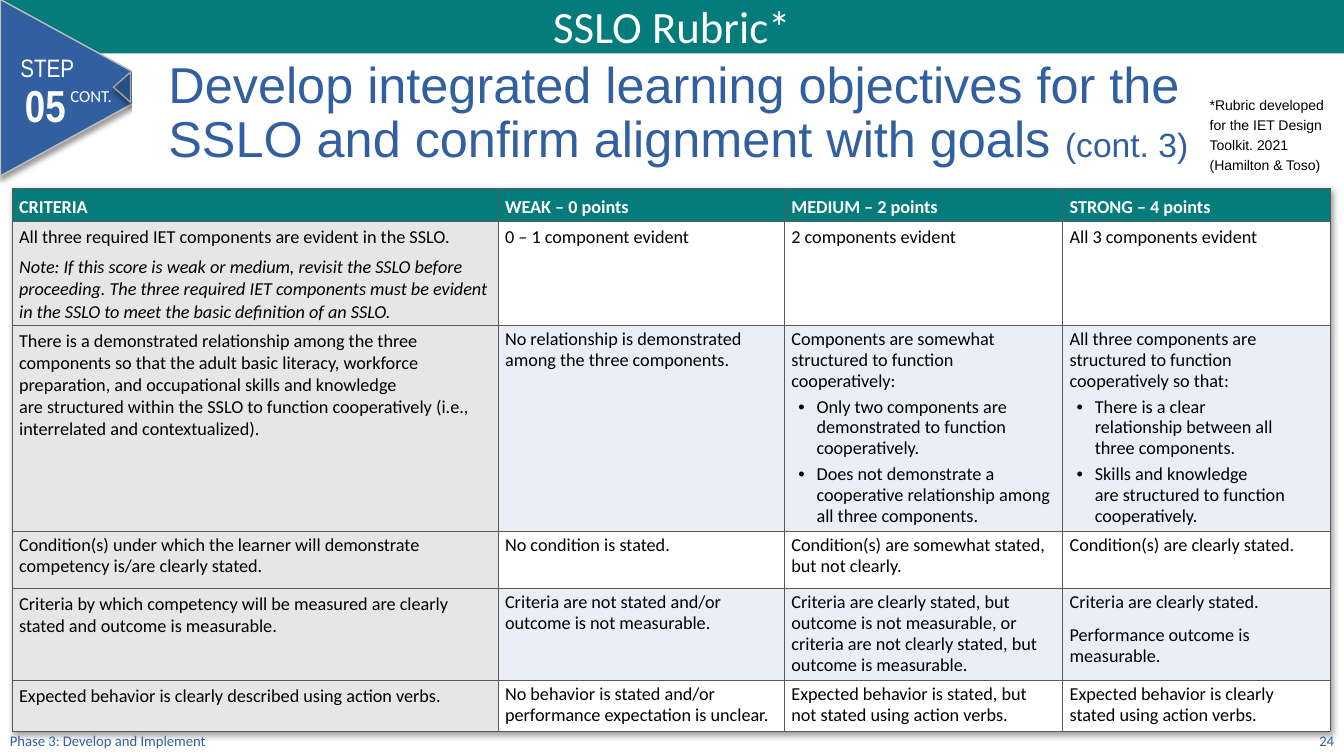
from lxml.etree import SubElement
from pptx import Presentation
from pptx.dml.color import RGBColor
from pptx.enum.shapes import MSO_SHAPE as Shape
from pptx.enum.text import MSO_ANCHOR as Anchor, MSO_AUTO_SIZE as AutoSize, PP_ALIGN as Align
from pptx.oxml.ns import qn
from pptx.util import Inches, Pt

TEAL, BLUE, WHITE, BLACK = "047C7C", "315F9F", "FFFFFF", "000000"
GREY, PALE, BORDER = "E7E6E6", "EAEFF7", "595959"
HARD_SPACE = chr(160)
COLUMNS = [4.82, 2.84, 2.76, 2.65]
ROWS = [0.33, 1.02, 2.04, 0.57, 0.9, 0.5]
HEADINGS = ["CRITERIA", "WEAK – 0 points", "MEDIUM – 2 points", "STRONG – 4 points"]
RUBRIC = [
    [["All three required IET components are evident in the SSLO.",
      "Note: If this score is weak or medium, revisit the SSLO before proceeding. "
      "The three required IET components must be evident in the SSLO to meet the "
      "basic definition of an SSLO."],
     ["0 – 1 component evident"],
     ["2 components evident"],
     ["All 3 components evident"]],
    [["There is a demonstrated relationship~among the three components so~that the adult "
      "basic literacy, workforce preparation, and occupational skills and knowledge "
      "are~structured within the SSLO to function cooperatively (i.e., interrelated "
      "and contextualized)."],
     ["No relationship~is demonstrated among the three components."],
     ["Components are somewhat structured to function cooperatively:",
      "• Only two components are demonstrated to function cooperatively.",
      "• Does not demonstrate a cooperative~relationship among all three~components."],
     ["All three components are structured to function cooperatively so that:",
      "• There is a clear relationship~between all \nthree components.",
      "• Skills and knowledge are~structured to function cooperatively."]],
    [["Condition(s) under which the learner will demonstrate competency is/are clearly stated."],
     ["No condition is stated."],
     ["Condition(s) are somewhat stated, but not clearly."],
     ["Condition(s) are clearly stated."]],
    [["Criteria by which competency will be measured are clearly stated and outcome is measurable."],
     ["Criteria are not~stated and/or outcome is not~measurable."],
     ["Criteria are clearly stated, but outcome is~not measurable, or criteria are not "
      "clearly stated, but outcome is measurable."],
     ["Criteria are clearly stated.", "Performance outcome is measurable."]],
    [["Expected behavior is clearly described using action verbs."],
     ["No behavior is stated and/or performance expectation~is unclear."],
     ["Expected behavior is stated, but not stated using action verbs."],
     ["Expected behavior is clearly stated using action verbs."]],
]


def rgb(code):
    """Turn a hex string into a colour."""
    return RGBColor.from_string(code)


def write(frame, text, size=13, color=BLACK, font="Calibri", bold=False, italic=False,
          align=Align.LEFT, spacing=1.0, before=0, after=0, bullet=False, append=False):
    """Write a formatted paragraph, or append a run to the last one."""
    paragraph = frame.paragraphs[-1]
    if paragraph.runs and not append:
        paragraph = frame.add_paragraph()
    paragraph.alignment, paragraph.line_spacing = align, spacing
    paragraph.space_before, paragraph.space_after = Pt(before), Pt(after)
    if bullet:
        properties = paragraph._p.get_or_add_pPr()
        properties.set("marL", str(Inches(0.25)))
        properties.set("indent", str(Inches(-0.18)))
        SubElement(properties, qn("a:buFont"), typeface="Arial")
        SubElement(properties, qn("a:buChar"), char="•")
    for number, line in enumerate(text.split("\n")):
        if number:
            paragraph.add_line_break()
        run = paragraph.add_run()
        run.text = line
        run.font.size, run.font.name = Pt(size), font
        run.font.bold, run.font.italic = bold, italic
        run.font.color.rgb = rgb(color)


def add_label(slide, box, text, wrap=True, anchor=Anchor.TOP, **style):
    """Place a line of text in a box given in inches."""
    frame = slide.shapes.add_textbox(*map(Inches, box)).text_frame
    frame.word_wrap, frame.vertical_anchor = wrap, anchor
    write(frame, text, **style)


def add_shadow(properties, direction):
    """Add a soft outer shadow to shape or table properties."""
    effects = properties.find(qn("a:effectLst"))
    if effects is None:
        effects = SubElement(properties, qn("a:effectLst"))
    shadow = SubElement(effects, qn("a:outerShdw"), blurRad=str(Pt(4)), dist=str(Pt(3)),
                        dir=str(direction * 60000), algn="tl", rotWithShape="0")
    color = SubElement(shadow, qn("a:srgbClr"), val=BLACK)
    SubElement(color, qn("a:alpha"), val="40000")


def add_block(slide, kind, box, fill, line=None, rotation=0):
    """Add a filled shape; an outlined one also casts a shadow."""
    block = slide.shapes.add_shape(kind, *map(Inches, box))
    block.shadow.inherit = False
    block.rotation = rotation
    block.fill.solid()
    block.fill.fore_color.rgb = rgb(fill)
    if line:
        block.line.color.rgb, block.line.width = rgb(line), Pt(1)
        add_shadow(block._element.spPr, 90)
    else:
        block.line.fill.background()


def add_banner(slide, left, top, width, height):
    """Draw the top bar with the rubric name."""
    add_block(slide, Shape.RECTANGLE, (left, top, width, height), TEAL)
    add_label(slide, (left + 4.34, top - 0.06, 4.65, 0.64), "SSLO Rubric*",
              size=32, color=WHITE, align=Align.CENTER)


def add_step_badge(slide, left, top):
    """Draw the step pointer with its number."""
    add_block(slide, Shape.ISOSCELES_TRIANGLE, (left - 0.07, top + 0.07, 1.75, 1.6),
              BLUE, "BFBFBF", 90)
    add_block(slide, Shape.ISOSCELES_TRIANGLE, (left + 1.06, top + 0.78, 0.3, 0.17),
              "284F84", "A6A6A6", 270)
    add_block(slide, Shape.RECTANGLE, (left + 1.31, top + 0.66, 0.45, 0.56), WHITE)
    narrow = dict(color=WHITE, font="Arial Narrow", align=Align.CENTER, wrap=False)
    add_label(slide, (left + 0.1, top + 0.47, 0.74, 0.4), "STEP", size=18, **narrow)
    add_label(slide, (left + 0.12, top + 0.72, 0.66, 0.64), "05", size=32, bold=True, **narrow)
    add_label(slide, (left + 0.6, top + 0.8, 0.71, 0.3), "CONT.", size=12, color=WHITE, wrap=False)


def add_heading(slide, left, top, width, height):
    """Place the title in front of the badge, and the rubric credit at its right."""
    title = slide.shapes.title
    slide.shapes._spTree.append(title._element)
    title.left, title.top, title.width, title.height = map(Inches, (left, top, width, height))
    frame = title.text_frame
    frame.word_wrap, frame.auto_size, frame.vertical_anchor = True, AutoSize.NONE, Anchor.TOP
    style = dict(font="Arial", color=BLUE, spacing=0.9)
    write(frame, "Develop integrated learning objectives for the SSLO and confirm "
          "alignment with goals ", size=36, **style)
    write(frame, "(cont. 3)", size=24, append=True, **style)
    add_label(slide, (left + 10.33, top + 0.33, 1.4, 0.89),
              "*Rubric developed for the IET Design Toolkit. 2021  (Hamilton & Toso)",
              size=10, font="Arial", spacing=1.2, before=6)


def format_cell(cell, fill):
    """Set the fill, margins and thin borders of a cell."""
    cell.margin_left = cell.margin_right = Inches(0.07)
    cell.margin_top = cell.margin_bottom = Inches(0.04)
    properties = cell._tc.get_or_add_tcPr()
    for side in ("a:lnL", "a:lnR", "a:lnT", "a:lnB"):
        border = SubElement(properties, qn(side), w=str(Pt(0.5)))
        SubElement(SubElement(border, qn("a:solidFill")), qn("a:srgbClr"), val=BORDER)
    cell.fill.solid()
    cell.fill.fore_color.rgb = rgb(fill)


def write_criterion(cell, paragraphs, spacing):
    """Write a cell's statements, notes and bullets, with ~ as a hard space."""
    for text in paragraphs:
        bullet, note = text.startswith("• "), text.startswith("Note:")
        tight = bullet or text.endswith(":")
        write(cell.text_frame, text.removeprefix("• ").replace("~", HARD_SPACE),
              bullet=bullet, italic=note, spacing=spacing,
              before=0 if tight or note else 2, after=3 if tight else 5 if note else 6)


def add_rubric(slide, left, top):
    """Build the scoring table."""
    box = map(Inches, (left, top, sum(COLUMNS), sum(ROWS)))
    table = slide.shapes.add_table(len(ROWS), len(COLUMNS), *box).table
    add_shadow(table._tbl.tblPr, 45)
    style_id = table._tbl.tblPr.find(qn("a:tableStyleId"))
    table._tbl.tblPr.append(style_id)
    for column, width in zip(table.columns, COLUMNS):
        column.width = Inches(width)
    for row, height in zip(table.rows, ROWS):
        row.height = Inches(height)
    for column, heading in enumerate(HEADINGS):
        cell = table.cell(0, column)
        format_cell(cell, TEAL)
        cell.vertical_anchor = Anchor.MIDDLE
        write(cell.text_frame, heading, color=WHITE, bold=True, spacing=1.15)
    for row, criteria in enumerate(RUBRIC, 1):
        band = WHITE if row % 2 else PALE
        for column, paragraphs in enumerate(criteria):
            cell = table.cell(row, column)
            format_cell(cell, band if column else GREY)
            single = row == 1 or column == 0 and row != 3
            write_criterion(cell, paragraphs, 1.0 if single else Pt(15))


def add_footer(slide, left, top, width, height):
    """Place the phase name and the page number."""
    style = dict(size=10.5, color=BLUE, anchor=Anchor.BOTTOM)
    add_label(slide, (left, top, 4.5, height), "Phase 3: Develop and Implement", **style)
    add_label(slide, (left + width - 3, top, 3, height), "24", align=Align.RIGHT, **style)


def main():
    """Build the rubric slide."""
    deck = Presentation()
    deck.slide_width, deck.slide_height = Inches(13.33), Inches(7.5)
    slide = deck.slides.add_slide(deck.slide_layouts[5])
    add_banner(slide, 0, 0, 13.33, 0.53)
    add_step_badge(slide, 0, 0)
    add_heading(slide, 1.57, 0.54, 11.5, 1.45)
    add_rubric(slide, 0.12, 1.87)
    add_footer(slide, 0, 7.17, 13.33, 0.31)
    deck.save("out.pptx")


if __name__ == "__main__":
    main()
